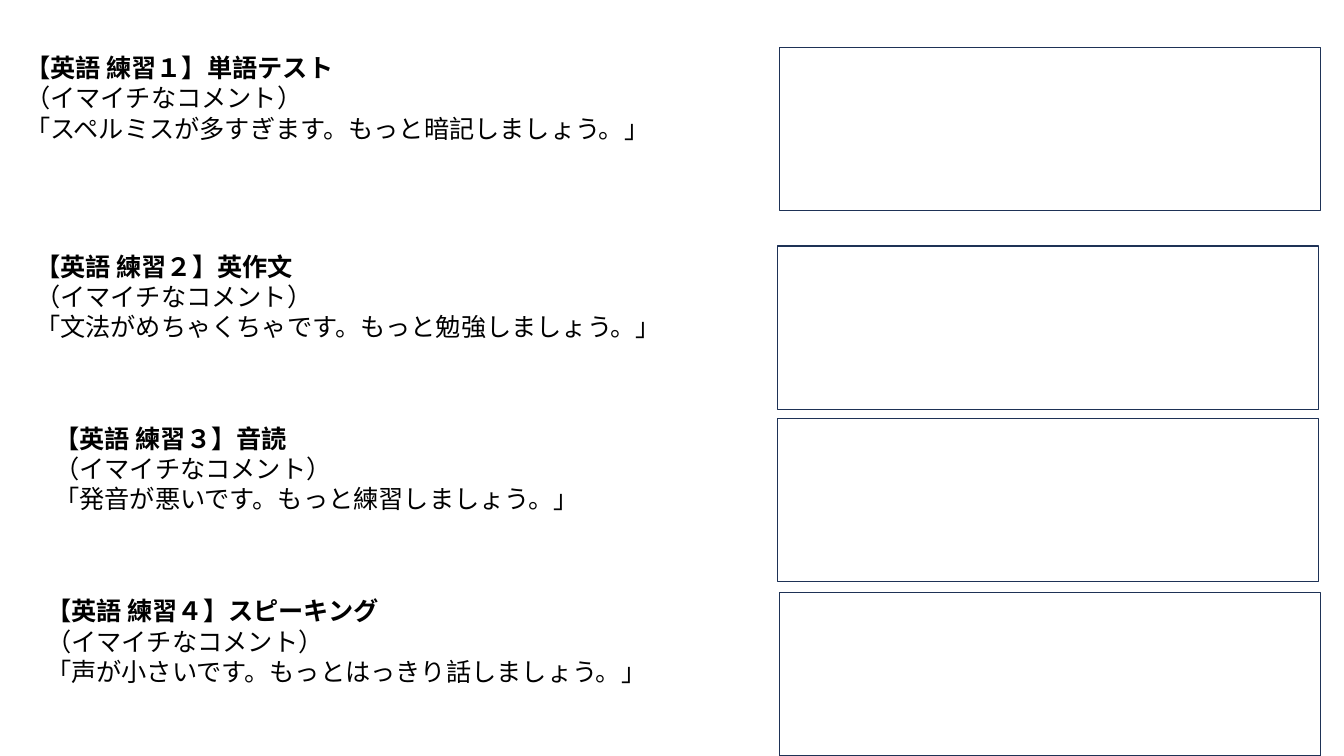
import copy
from dataclasses import dataclass

import pptx
import pptx.dml.color
import pptx.enum.shapes
import pptx.enum.text
import pptx.oxml.ns
import pptx.util
from lxml import etree
from pptx.util import Inches


@dataclass(frozen=True)
class Theme:
    font: str = "Noto Sans CJK JP"
    size: int = 18
    text: str = "000000"
    fill: str = "FFFFFF"
    line: str = "1E3256"


THEME = Theme()
SUBTITLE = "（イマイチなコメント）"
EXERCISES = [
    ("【英語 練習１】単語テスト", "「スペルミスが多すぎます。もっと暗記しましょう。」", 0.15, 0.47, 7.73, 0.47),
    ("【英語 練習２】英作文", "「文法がめちゃくちゃです。もっと勉強しましょう。」", 0.25, 2.44, 7.71, 2.44),
    ("【英語 練習３】音読", "「発音が悪いです。もっと練習しましょう。」", 0.44, 4.15, 7.71, 4.15),
    ("【英語 練習４】スピーキング", "「声が小さいです。もっとはっきり話しましょう。」", 0.36, 5.86, 7.73, 5.88),
]


def rgb(value):
    return pptx.dml.color.RGBColor.from_string(value)


def format_paragraph(p, bold):
    font = p.font
    font.name = THEME.font
    font.size = pptx.util.Pt(THEME.size)
    font.bold = bold
    font.color.rgb = rgb(THEME.text)
    latin = p._p.find(".//" + pptx.oxml.ns.qn("a:latin"))
    east_asian = etree.Element(pptx.oxml.ns.qn("a:ea"), typeface=THEME.font)
    latin.addnext(east_asian)


def add_comment(s, lines, left, top):
    tf = s.shapes.add_textbox(Inches(left), Inches(top), Inches(6.67), Inches(1.01)).text_frame
    tf.word_wrap = True
    tf.auto_size = pptx.enum.text.MSO_AUTO_SIZE.SHAPE_TO_FIT_TEXT
    tf.text = "\n".join(lines)
    for i, p in enumerate(tf.paragraphs):
        format_paragraph(p, bold=i == 0)


def add_answer_box(s, left, top):
    sp = s.shapes.add_shape(
        pptx.enum.shapes.MSO_SHAPE.RECTANGLE,
        Inches(left), Inches(top), Inches(5.37), Inches(1.62),
    )
    sp.shadow.inherit = False
    sp.fill.solid()
    sp.fill.fore_color.rgb = rgb(THEME.fill)
    sp.line.color.rgb = rgb(THEME.line)
    sp.line.width = pptx.util.Pt(1)


def main():
    prs = pptx.Presentation()
    prs.slide_width, prs.slide_height = Inches(13.33), Inches(7.5)
    s = prs.slides.add_slide(prs.slide_layouts[6])
    for title, comment, text_left, text_top, box_left, box_top in EXERCISES:
        add_answer_box(s, box_left, box_top)
        add_comment(s, (title, SUBTITLE, comment), text_left, text_top)
    prs.save("out.pptx")


if __name__ == "__main__":
    main()
